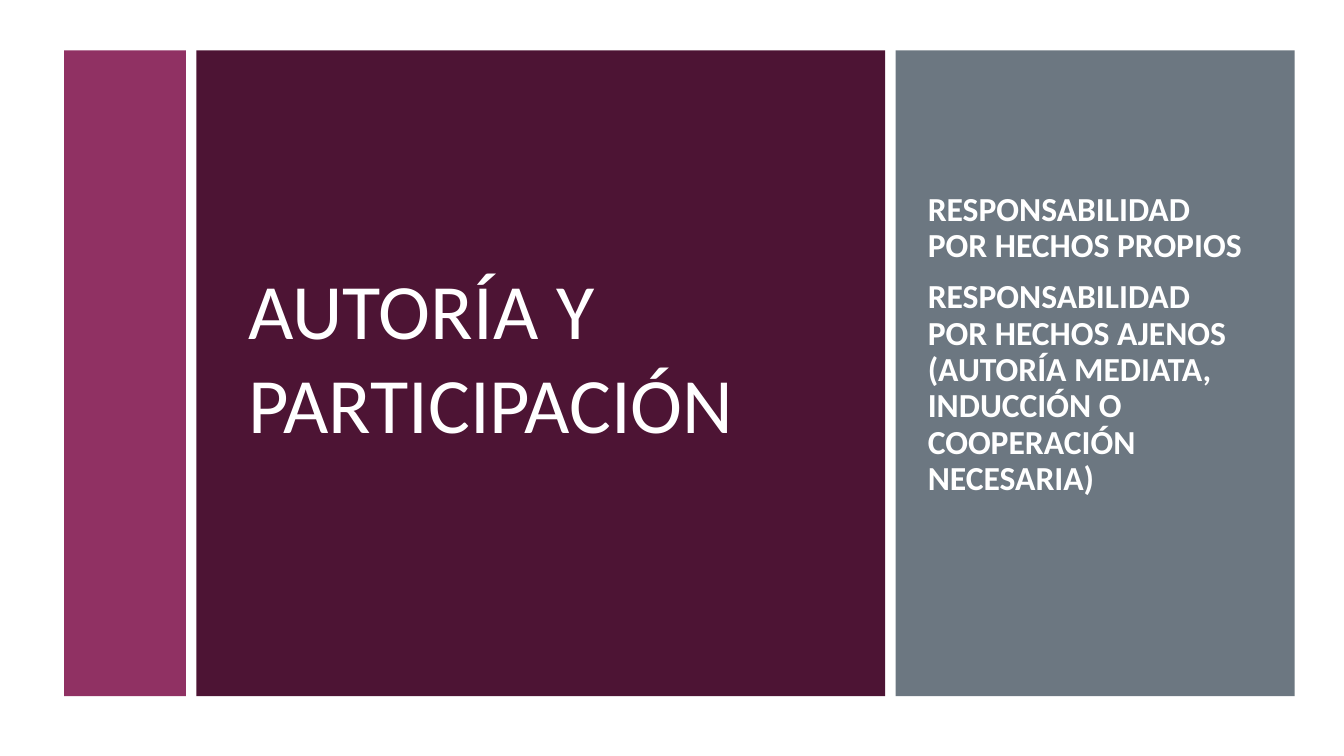
from lxml.etree import SubElement
from pptx import Presentation
from pptx.dml.color import RGBColor
from pptx.enum.shapes import MSO_SHAPE as Preset
from pptx.enum.text import MSO_ANCHOR as Anchor, MSO_AUTO_SIZE as AutoSize, PP_ALIGN as Align
from pptx.oxml.ns import qn
from pptx.util import Pt

EMU_PER_PX = 9525
WHITE, PLUM, SLATE, MAGENTA = "FFFFFF", "4D1434", "6C7781", "903163"
PANEL_TOP, PANEL_HEIGHT = 48, 615


def px(length):
    return length * EMU_PER_PX


def color(hex_string):
    return RGBColor.from_string(hex_string)


class SlideBuilder:
    font = "Calibri"

    def __init__(self, page):
        self.page = page

    def panel(self, left, top, width, height, fill):
        shape = self.page.shapes.add_shape(
            Preset.RECTANGLE, px(left), px(top), px(width), px(height))
        shape.shadow.inherit = False
        shape.fill.solid()
        shape.fill.fore_color.rgb = color(fill)
        shape.line.fill.background()

    def fill_placeholder(self, box, bounds, text, size, bold=False):
        """Place, bring to the front and format a title or body placeholder."""
        box.left, box.top, box.width, box.height = map(px, bounds)
        box.element.getparent().append(box.element)
        frame = box.text_frame
        frame.text = text
        frame.word_wrap = True
        frame.auto_size = AutoSize.NONE
        frame.vertical_anchor = Anchor.MIDDLE
        for para in frame.paragraphs:
            para.alignment = Align.LEFT
            for span in para.runs:
                span.font.name = self.font
                span.font.size = Pt(size)
                span.font.bold = bold
                span.font.color.rgb = color(WHITE)

    def title(self, bounds, text, size):
        self.fill_placeholder(self.page.shapes.title, bounds, text, size)

    def body(self, bounds, lines, size):
        box = self.page.placeholders[1]
        self.fill_placeholder(box, bounds, "\n".join(lines), size, bold=True)
        for index, para in enumerate(box.text_frame.paragraphs):
            properties = para._p.get_or_add_pPr()
            properties.set("marL", "0")
            properties.set("indent", "0")
            SubElement(properties, qn("a:buNone"))
            para.line_spacing = 0.9
            para.space_before = Pt(0.2 * size if index else 0)
            para.space_after = Pt(6)


def main():
    deck = Presentation()
    deck.slide_width, deck.slide_height = px(1280), px(720)
    builder = SlideBuilder(deck.slides.add_slide(deck.slide_layouts[1]))

    builder.panel(0, 0, 1280, 720, WHITE)
    for left, width, fill in ((187, 656, PLUM), (853, 380, SLATE), (61, 116, MAGENTA)):
        builder.panel(left, PANEL_TOP, width, PANEL_HEIGHT, fill)

    builder.title((227, 89, 580, 498), "AUTORÍA Y PARTICIPACIÓN", 56)
    builder.body((874, 70, 330, 517), (
        "RESPONSABILIDAD POR HECHOS PROPIOS",
        "RESPONSABILIDAD POR HECHOS AJENOS (AUTORÍA MEDIATA, "
        "INDUCCIÓN O COOPERACIÓN NECESARIA)",
    ), 24)
    deck.save("out.pptx")


if __name__ == "__main__":
    main()
